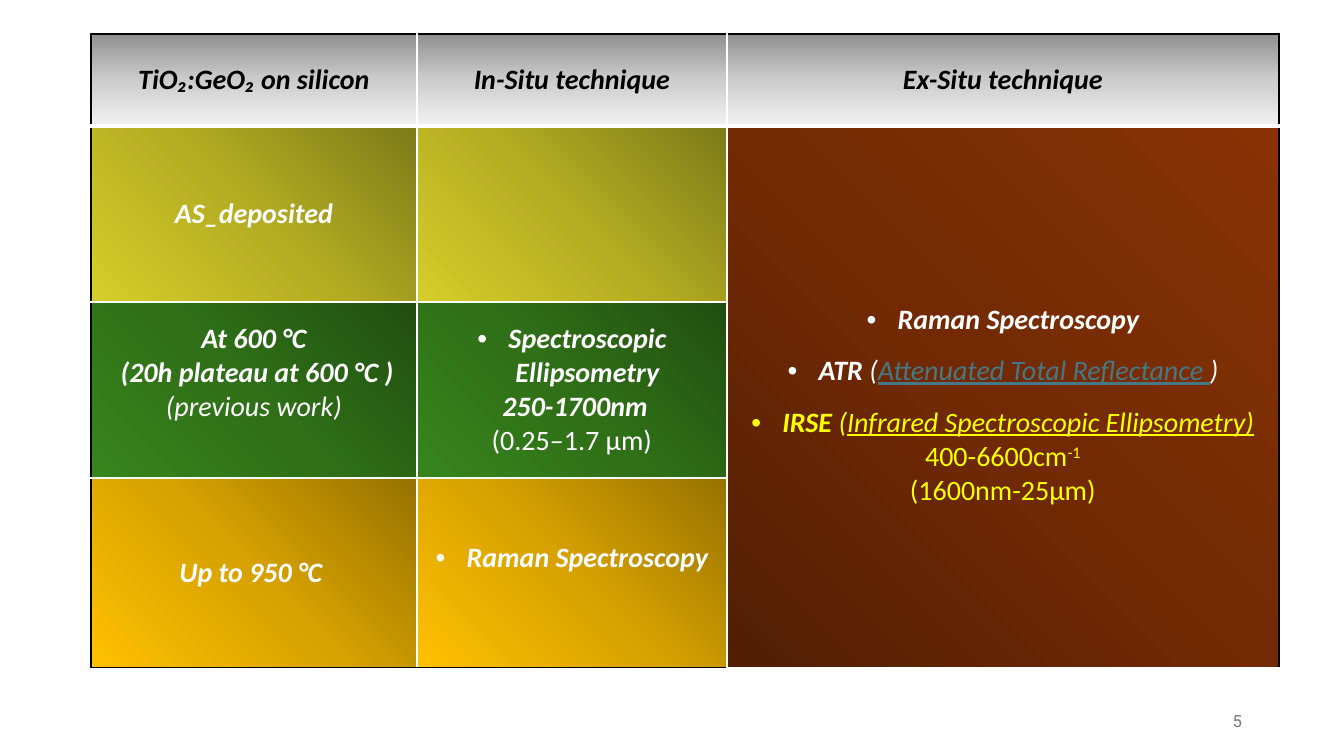
from lxml import etree
from pptx import Presentation
from pptx import util as u
from pptx.dml.color import RGBColor
from pptx.enum import text
from pptx.oxml.ns import qn

PX = 9071.43
BLACK, WHITE, YELLOW, TEAL = "000000", "FFFFFF", "FFFF00", "467886"
COLUMNS = [326, 310, 552]
ROWS = [92, 176, 176, 190]
TABLE_BOX = (91, 34, sum(COLUMNS), sum(ROWS))
NUMBER_BOX = (950, 701, 302, 40)
INDENT = 31

GREY = (["909090", "CCCCCC", "F2F2F2"], 90)
OLIVE = (["7E7A18", "B4AD22", "D5CD29"], 135)
GREEN = (["214E10", "2F6F17", "37841C"], 135)
GOLD = (["977200", "D7A200", "FFC000"], 135)
BROWN = (["511E03", "732A04", "883205"], 315)
ROW_FILLS = [GREY, OLIVE, GREEN, GOLD]


def px(length):
    return u.Emu(round(length * PX))


def colour(value):
    return RGBColor.from_string(value)


def span(words, style="bi", ink=WHITE):
    return words, style, ink


def line(*spans, bullet=False, spacing=None):
    return spans, bullet, spacing


CELLS = {
    (0, 0): [line(span("TiO₂:GeO₂ on silicon", ink=BLACK))],
    (0, 1): [line(span("In-Situ technique", ink=BLACK))],
    (0, 2): [line(span("Ex-Situ technique", ink=BLACK))],
    (1, 0): [line(span("AS_deposited"))],
    (1, 2): [
        line(span("Raman Spectroscopy"), bullet=True, spacing=1.5),
        line(span("ATR"), span(" (", "i"),
             span("Attenuated Total Reflectance ", "iu", TEAL),
             span(")", "i"), bullet=True, spacing=1.5),
        line(span("IRSE ", ink=YELLOW), span("(", "i", YELLOW),
             span("Infrared Spectroscopic Ellipsometry)", "iu", YELLOW),
             bullet=True, spacing=1.5),
        line(span("400-6600cm", "", YELLOW), span("-1", "^", YELLOW)),
        line(span("(1600nm-25µm)", "", YELLOW)),
    ],
    (2, 0): [
        line(span("At 600 °C")),
        line(span(" (20h plateau at 600 °C )")),
        line(span("(previous work)", "i")),
    ],
    (2, 1): [
        line(span("Spectroscopic Ellipsometry"), bullet=True),
        line(span(" 250-1700nm")),
        line(span("(0.25–1.7 µm)", "")),
    ],
    (3, 0): [line(span("Up to 950 °C "))],
    (3, 1): [line(span("Raman Spectroscopy"), bullet=True)],
}
RAISED = {(2, 0): 34, (3, 1): 30}


def add_child(parent, tag, **attributes):
    return etree.SubElement(parent, qn(tag), {key: str(value) for key, value in attributes.items()})


def add_bullet(para):
    properties = para._p.get_or_add_pPr()
    properties.set("marL", str(px(INDENT)))
    properties.set("indent", str(px(-INDENT)))
    add_child(properties, "a:buFont", typeface="Arial")
    add_child(properties, "a:buChar", char="•")


def write_lines(frame, lines):
    for index, (spans, bullet, spacing) in enumerate(lines):
        para = frame.add_paragraph() if index else frame.paragraphs[0]
        para.alignment = text.PP_ALIGN.CENTER
        if spacing:
            para.line_spacing = spacing
        if bullet:
            add_bullet(para)
        para.font.name, para.font.size = "Calibri", u.Pt(20)
        for words, style, ink in spans:
            run = para.add_run()
            run.text = words
            run.font.bold = "b" in style
            run.font.italic = "i" in style
            run.font.underline = "u" in style
            run.font.color.rgb = colour(ink)
            if "^" in style:
                run.font._element.set("baseline", "30000")


def draw_borders(cell, row, column):
    outer = {"L": column == 0, "R": column == len(COLUMNS) - 1,
             "T": row == 0, "B": row == len(ROWS) - 1}
    header_edges = [(0, "B"), (1, "T")]
    for side, is_outer in outer.items():
        points = 3 if (row, side) in header_edges else 1
        border = add_child(cell._tc.get_or_add_tcPr(), f"a:ln{side}", w=u.Pt(points))
        fill = add_child(border, "a:solidFill")
        add_child(fill, "a:srgbClr", val=BLACK if is_outer else WHITE)


def fill_gradient(cell, stops, angle):
    gradient = add_child(cell._tc.get_or_add_tcPr(), "a:gradFill", rotWithShape=1)
    stop_list = add_child(gradient, "a:gsLst")
    for index, value in enumerate(stops):
        stop = add_child(stop_list, "a:gs", pos=index * 50000)
        add_child(stop, "a:srgbClr", val=value)
    add_child(gradient, "a:lin", ang=angle * 60000, scaled=0)


def add_technique_table(page, box):
    frame = page.shapes.add_table(len(ROWS), len(COLUMNS), *map(px, box))
    table = frame.table
    table.horz_banding = False
    for column, width in zip(table.columns, COLUMNS):
        column.width = px(width)
    for row, height in zip(table.rows, ROWS):
        row.height = px(height)
    table.cell(1, 2).merge(table.cell(3, 2))
    for row in range(len(ROWS)):
        for column in range(len(COLUMNS)):
            cell = table.cell(row, column)
            cell.vertical_anchor = text.MSO_ANCHOR.MIDDLE
            cell.margin_bottom = px(5 + RAISED.get((row, column), 0))
            draw_borders(cell, row, column)
            fill_gradient(cell, *(BROWN if row and column == 2 else ROW_FILLS[row]))
            write_lines(cell.text_frame, CELLS.get((row, column), []))


def add_page_number(page, box, number):
    frame = page.shapes.add_textbox(*map(px, box)).text_frame
    frame.word_wrap = True
    frame.vertical_anchor = text.MSO_ANCHOR.MIDDLE
    para = frame.paragraphs[0]
    para.text = number
    para.alignment = text.PP_ALIGN.RIGHT
    para.font.name, para.font.size = "Roboto", u.Pt(12)
    para.font.color.rgb = colour("797979")


def main():
    deck = Presentation()
    deck.slide_width, deck.slide_height = px(1344), px(756)
    page = deck.slides.add_slide(deck.slide_layouts[6])
    add_page_number(page, NUMBER_BOX, "5")
    add_technique_table(page, TABLE_BOX)
    deck.save("out.pptx")


if __name__ == "__main__":
    main()
